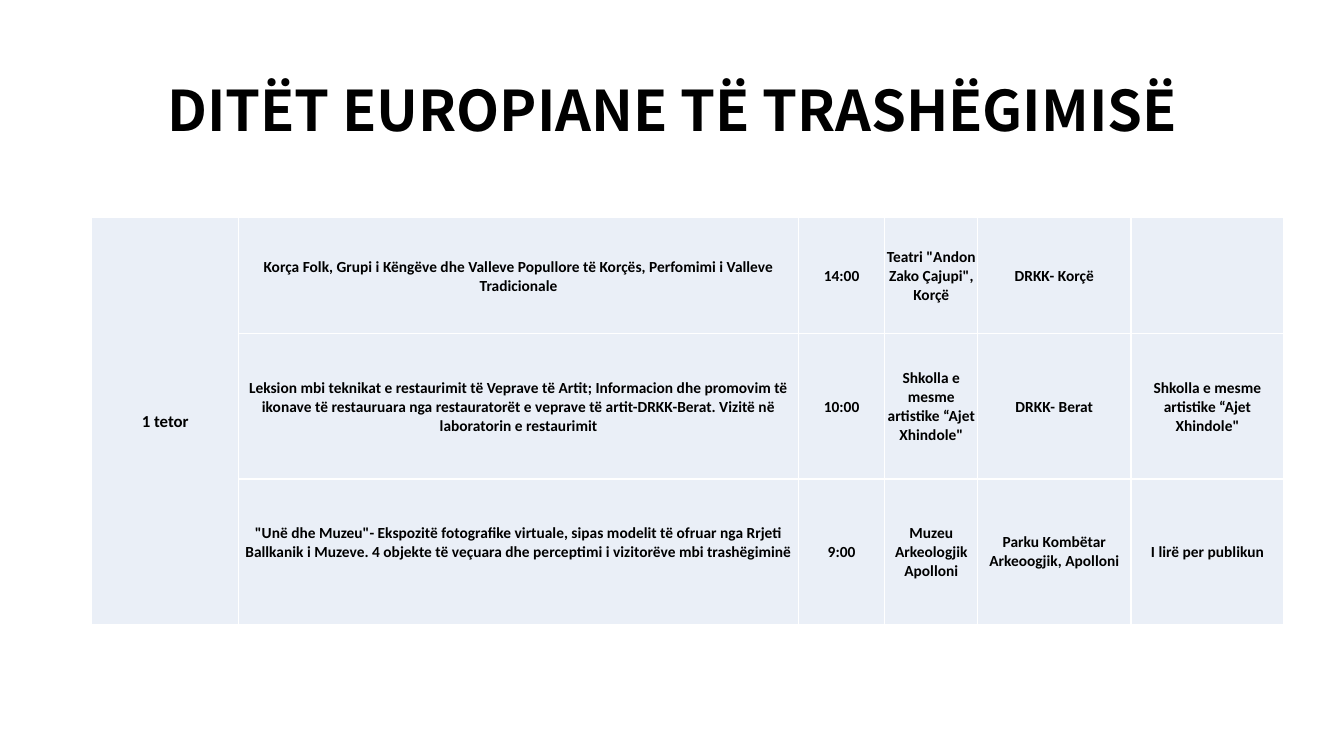
"""Build the programme slide for the European Heritage Days."""
from dataclasses import dataclass

from lxml.etree import SubElement
from pptx import Presentation
from pptx.dml.color import RGBColor
from pptx.enum.text import MSO_ANCHOR, MSO_AUTO_SIZE, PP_ALIGN
from pptx.oxml.ns import qn
from pptx.slide import Slide
from pptx.table import Table, _Cell
from pptx.text.text import _Paragraph
from pptx.util import Cm, Pt


@dataclass(frozen=True)
class Theme:
    """Colours, fonts and type sizes of the slide."""
    ink: str = "000000"
    cell: str = "EAEFF7"
    rule: str = "FFFFFF"
    title_font: str = "Noto Sans CJK KR"
    table_font: str = "Calibri"
    title_size: int = 40
    date_size: int = 12
    event_size: int = 11


@dataclass(frozen=True)
class Event:
    """One programme entry; lift is the space kept below its description."""
    description: str
    hour: str
    venue: str
    organiser: str
    audience: str = ""
    height: float = 3.66
    lift: float = 0


THEME = Theme()
DATE = "1 tetor"
COLUMN_WIDTHS = (3.71, 14.1, 2.18, 2.34, 3.86, 3.86)
EVENTS = (
    Event("Korça Folk, Grupi i Këngëve dhe Valleve Popullore të Korçës, "
          "Perfomimi i Valleve Tradicionale",
          "14:00", "Teatri \"Andon Zako Çajupi\", Korçë", "DRKK- Korçë", height=2.92),
    Event("Leksion mbi teknikat e restaurimit të Veprave të Artit; Informacion dhe "
          "promovim të ikonave të restauruara nga restauratorët e veprave të "
          "artit-DRKK-Berat. Vizitë në laboratorin e restaurimit",
          "10:00", "Shkolla e mesme artistike “Ajet Xhindole\"", "DRKK- Berat",
          "Shkolla e mesme artistike “Ajet Xhindole\""),
    Event("\"Unë dhe Muzeu\"- Ekspozitë fotografike virtuale, sipas modelit të ofruar "
          "nga Rrjeti Ballkanik i Muzeve. 4 objekte të veçuara dhe perceptimi i "
          "vizitorëve mbi trashëgiminë",
          "9:00", "Muzeu Arkeologjik Apolloni", "Parku Kombëtar Arkeoogjik, Apolloni",
          "I lirë per publikun", lift=0.48),
)


def write(para: _Paragraph, text: str, font: str, size: int) -> None:
    """Write centred bold text into a paragraph."""
    para.alignment = PP_ALIGN.CENTER
    span = para.add_run()
    span.text = text
    for name, value in {"name": font, "size": Pt(size), "bold": True}.items():
        setattr(span.font, name, value)
    span.font.color.rgb = RGBColor.from_string(THEME.ink)


def add_title(page: Slide, text: str) -> None:
    """Place and format the title placeholder."""
    title = page.shapes.title
    place = {"left": 2.33, "top": 1.01, "width": 29.21, "height": 3.68}
    for name, value in place.items():
        setattr(title, name, Cm(value))
    frame = title.text_frame
    frame.word_wrap = True
    frame.auto_size = MSO_AUTO_SIZE.NONE
    frame.vertical_anchor = MSO_ANCHOR.MIDDLE
    frame.paragraphs[0].line_spacing = 0.9
    write(frame.paragraphs[0], text, THEME.title_font, THEME.title_size)


def format_cell(cell: _Cell) -> None:
    """Give a cell its borders, fill, margins and anchor."""
    properties = cell._tc.get_or_add_tcPr()
    for side in ("L", "R", "T", "B"):
        line = SubElement(properties, qn(f"a:ln{side}"), w=str(Pt(1)))
        fill = SubElement(line, qn("a:solidFill"))
        SubElement(fill, qn("a:srgbClr"), val=THEME.rule)
    cell.fill.solid()
    cell.fill.fore_color.rgb = RGBColor.from_string(THEME.cell)
    cell.vertical_anchor = MSO_ANCHOR.MIDDLE
    margins = {"left": 0.02, "right": 0.02, "top": 0.02, "bottom": 0}
    for side, value in margins.items():
        setattr(cell, f"margin_{side}", Cm(value))


def fill_row(table: Table, index: int, event: Event) -> None:
    """Write one event into its table row."""
    table.rows[index].height = Cm(event.height)
    texts = (event.description, event.hour, event.venue, event.organiser, event.audience)
    for column, text in enumerate(texts, start=1):
        if text:
            para = table.cell(index, column).text_frame.paragraphs[0]
            write(para, text, THEME.table_font, THEME.event_size)
    table.cell(index, 1).margin_bottom = Cm(event.lift)


def add_programme(page: Slide) -> None:
    """Add the table of events under one merged date cell."""
    width = sum(COLUMN_WIDTHS)
    height = sum(event.height for event in EVENTS)
    table = page.shapes.add_table(len(EVENTS), len(COLUMN_WIDTHS), Cm(2.31), Cm(5.49),
                                  Cm(width), Cm(height)).table
    table.first_row = False
    table.horz_banding = False
    for column, column_width in zip(table.columns, COLUMN_WIDTHS):
        column.width = Cm(column_width)
    for cell in table.iter_cells():
        format_cell(cell)
    for index, event in enumerate(EVENTS):
        fill_row(table, index, event)
    date_cell = table.cell(0, 0)
    date_cell.merge(table.cell(len(EVENTS) - 1, 0))
    write(date_cell.text_frame.paragraphs[0], DATE, THEME.table_font, THEME.date_size)


def main() -> None:
    """Build and save the deck."""
    deck = Presentation()
    deck.slide_width, deck.slide_height = Cm(33.87), Cm(19.05)
    page = deck.slides.add_slide(deck.slide_layouts[5])
    add_title(page, "DITËT EUROPIANE TË TRASHËGIMISË")
    add_programme(page)
    deck.save("out.pptx")


if __name__ == "__main__":
    main()
